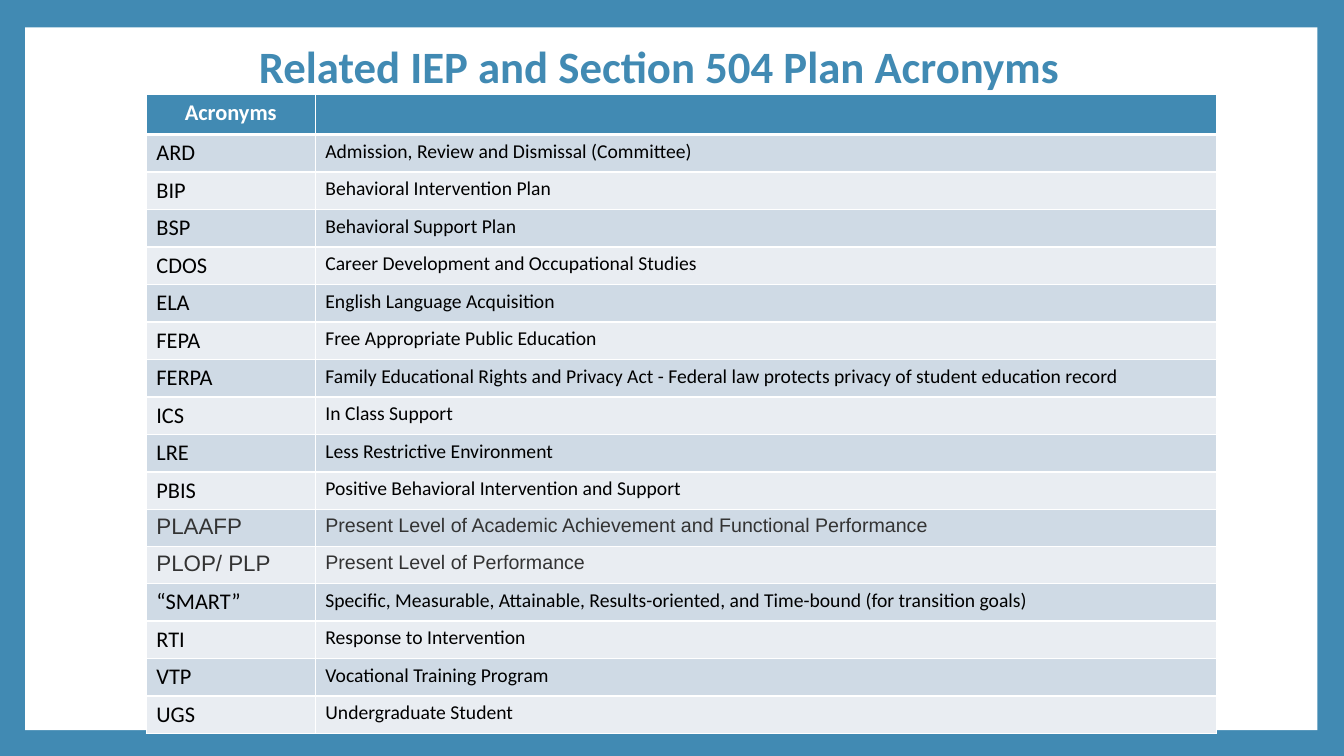
import pptx
import pptx.util
import pptx.dml.color
import pptx.enum.shapes
import pptx.enum.text
import pptx.oxml
import pptx.oxml.ns
from pptx.util import Pt

COLORS = {"blue": "418AB3", "white": "FFFFFF", "black": "000000",
          "gray": "333333", "band_dark": "CFDAE5", "band_light": "E9EDF2"}
ACRONYMS = [
    ("ARD", "Admission, Review and Dismissal (Committee)"),
    ("BIP", "Behavioral Intervention Plan"),
    ("BSP", "Behavioral Support Plan"),
    ("CDOS", "Career Development and Occupational Studies"),
    ("ELA", "English Language Acquisition"),
    ("FEPA", "Free Appropriate Public Education"),
    ("FERPA", "Family Educational Rights and Privacy Act - Federal law protects "
              "privacy of student education record"),
    ("ICS", "In Class Support"),
    ("LRE", "Less Restrictive Environment"),
    ("PBIS", "Positive Behavioral Intervention and Support"),
    ("PLAAFP", "Present Level of Academic Achievement and Functional Performance"),
    ("PLOP/ PLP", "Present Level of Performance"),
    ("“SMART”", "Specific, Measurable, Attainable, Results-oriented, and "
                "Time-bound (for transition goals)"),
    ("RTI", "Response to Intervention"),
    ("VTP", "Vocational Training Program"),
    ("UGS", "Undergraduate Student"),
]
ARIAL_ROWS = {"PLAAFP", "PLOP/ PLP"}


def rgb(name):
    """Return the named colour."""
    return pptx.dml.color.RGBColor.from_string(COLORS[name])


def fill_solid(fill, color):
    """Apply a solid fill."""
    fill.solid()
    fill.fore_color.rgb = rgb(color)


def set_text(tf, text, size, color, font="Calibri", bold=False, centered=False):
    """Write one formatted paragraph."""
    tf.text = text
    p = tf.paragraphs[0]
    if centered:
        p.alignment = pptx.enum.text.PP_ALIGN.CENTER
    for r in p.runs:
        r.font.name = font
        r.font.size = Pt(size)
        r.font.bold = bold
        r.font.color.rgb = rgb(color)


def add_panel(s, x, y, w, h):
    """Add the white panel inside the blue frame."""
    sp = s.shapes.add_shape(pptx.enum.shapes.MSO_SHAPE.RECTANGLE, Pt(x), Pt(y), Pt(w), Pt(h))
    sp.shadow.inherit = False
    fill_solid(sp.fill, "white")
    sp.line.fill.background()


def add_title(s, text, x, y, w, h):
    """Add the centred title."""
    tf = s.shapes.add_textbox(Pt(x), Pt(y), Pt(w), Pt(h)).text_frame
    tf.word_wrap = True
    tf.vertical_anchor = pptx.enum.text.MSO_ANCHOR.MIDDLE
    set_text(tf, text, 32, "blue", bold=True, centered=True)
    tf.paragraphs[0].line_spacing = 0.9


def set_borders(cell, bottom):
    """Draw white cell borders ahead of the fill."""
    tcPr = cell._tc.get_or_add_tcPr()
    widths = {"lnL": 1, "lnR": 1, "lnT": 1, "lnB": bottom}
    for i, (tag, width) in enumerate(widths.items()):
        tcPr.insert(i, pptx.oxml.parse_xml(
            f'<a:{tag} {pptx.oxml.ns.nsdecls("a")} w="{Pt(width)}"><a:solidFill>'
            f'<a:srgbClr val="{COLORS["white"]}"/></a:solidFill></a:{tag}>'))


def set_cell(cell, text, fill, size, color, bottom=1, **style):
    """Fill, border and write one table cell."""
    set_text(cell.text_frame, text, size, color, **style)
    fill_solid(cell.fill, fill)
    set_borders(cell, bottom)


def add_acronym_table(s, x, y, widths, header_h, row_h, arial_h):
    """Add the banded table of acronyms."""
    heights = [header_h] + [arial_h if key in ARIAL_ROWS else row_h for key, _ in ACRONYMS]
    table = s.shapes.add_table(len(heights), len(widths), Pt(x), Pt(y),
                               Pt(sum(widths)), Pt(sum(heights))).table
    for column, width in zip(table.columns, widths):
        column.width = Pt(width)
    for row, height in zip(table.rows, heights):
        row.height = Pt(height)
    for col, text in enumerate(("Acronyms", "")):
        set_cell(table.cell(0, col), text, "blue", 16, "white", bottom=3,
                 bold=True, centered=True)
    for i, entry in enumerate(ACRONYMS, 1):
        fill = "band_dark" if i % 2 else "band_light"
        font, color = ("Arial", "gray") if entry[0] in ARIAL_ROWS else ("Calibri", "black")
        for col, (text, size) in enumerate(zip(entry, (16, 14))):
            set_cell(table.cell(i, col), text, fill, size, color, font=font)


def main():
    """Build and save the slide."""
    prs = pptx.Presentation()
    prs.slide_width, prs.slide_height = Pt(960), Pt(540)
    s = prs.slides.add_slide(prs.slide_layouts[6])
    fill_solid(s.background.fill, "blue")
    add_panel(s, 18, 19.5, 923, 502)
    add_title(s, "Related IEP and Section 504 Plan Acronyms", 113, 6.5, 716, 85.5)
    add_acronym_table(s, 104.5, 67.3, (120.7, 643.5), 28.5, 26.8, 25)
    prs.save("out.pptx")


if __name__ == "__main__":
    main()
